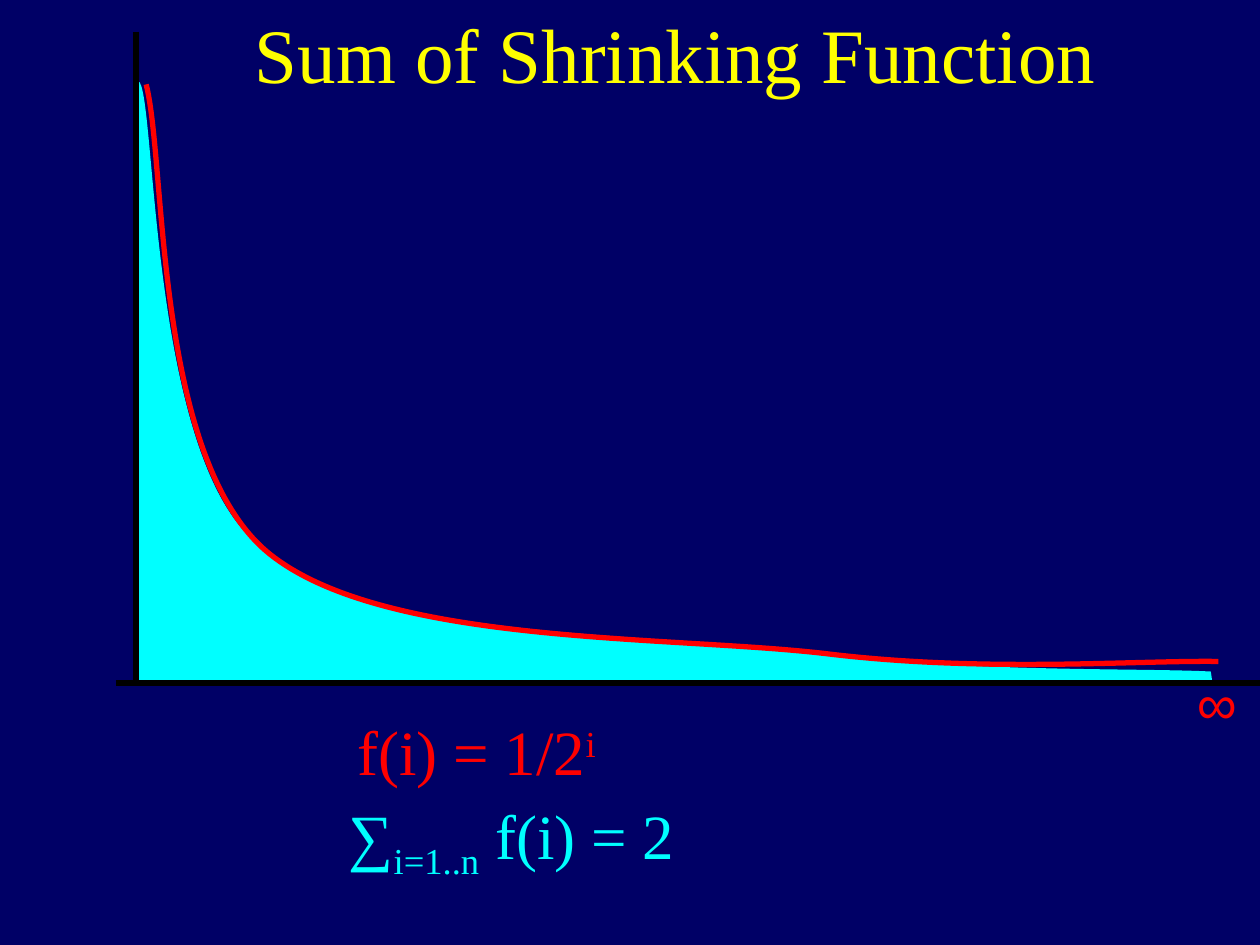
import pptx
import pptx.dml.color
import pptx.enum.shapes
import pptx.enum.text
import pptx.oxml.ns
import pptx.util
from lxml import etree

Inches, Pt, qn = pptx.util.Inches, pptx.util.Pt, pptx.oxml.ns.qn
ALIGN = pptx.enum.text.PP_ALIGN

NAVY, CYAN, RED, BLACK, YELLOW = "000066", "00FFFF", "FF0000", "000000", "FFFF00"
SERIF = "Times New Roman"
LINE_WIDTH = 3

# Each outline is a start point, then cubic segments (3 points) or lines (1 point)
AREA = [
    [(2.06, 4.33)],
    [(2.93, 5.09), (5.07, 5.01), (6.33, 5.17)],
    [(7.59, 5.34), (9.06, 5.3), (9.61, 5.33)],
    [(9.62, 5.4)],
    [(1.08, 5.4)],
    [(1.08, 0.65)],
    [(1.25, 0.47), (1.14, 3.63), (2.06, 4.33)],
]
CURVE = [
    [(1.16, 0.67)],
    [(1.32, 1.29), (1.22, 3.62), (2.12, 4.38)],
    [(3.02, 5.13), (5.31, 5.04), (6.57, 5.19)],
    [(7.82, 5.34), (9.02, 5.24), (9.67, 5.25)],
]
AXES = [((1.08, 0.25), (1.08, 5.42)), ((0.92, 5.42), (10, 5.42))]

# Box, alignment, font format, colour, runs of (text, baseline shift in percent)
TEXTS = [
    ((2.74, 5.61, 2.1, 0.7), ALIGN.LEFT, {"size": Pt(36), "name": SERIF}, RED,
     [("f(i) = 1/2", 0), ("i", 30)]),
    ((2.67, 6.27, 2.88, 0.7), ALIGN.LEFT, {"size": Pt(36), "name": SERIF}, CYAN,
     [("∑", 0), ("i=1..n", -25), (" f(i) = 2", 0)]),
    ((9.4, 5.26, 0.52, 0.63), ALIGN.LEFT, {"size": Pt(32), "name": "Arial"}, RED,
     [("∞", 0)]),
    ((1.92, 0, 6.88, 0.83), ALIGN.RIGHT, {"size": Pt(44), "name": SERIF}, YELLOW,
     [("Sum of Shrinking Function", 0)]),
]


def rgb(color):
    return pptx.dml.color.RGBColor.from_string(color)


def set_line(line, color):
    line.color.rgb = rgb(color)
    line.width = Pt(LINE_WIDTH)


def add_outline(slide, outline, close):
    """Draw straight segments through all points, then turn each triple into a curve."""
    start, *points = [(Inches(x), Inches(y)) for segment in outline for x, y in segment]
    builder = slide.shapes.build_freeform(*start)
    builder.add_line_segments(points, close=close)
    sp = builder.convert_to_shape()
    sp.shadow.inherit = False

    steps = iter(list(sp._element.iter(qn("a:lnTo"))))
    for segment in outline[1:]:
        lines = [next(steps) for _ in segment]
        if len(lines) == 3:
            curve = etree.Element(qn("a:cubicBezTo"))
            lines[0].addprevious(curve)
            for line in lines:
                curve.append(line[0])
                line.getparent().remove(line)
    return sp


def add_axis(slide, start, end):
    cx = slide.shapes.add_connector(pptx.enum.shapes.MSO_CONNECTOR.STRAIGHT,
                                    *map(Inches, start + end))
    set_line(cx.line, BLACK)
    etree.SubElement(cx._element.spPr, qn("a:effectLst"))


def add_text(slide, box, align, font, color, runs):
    tf = slide.shapes.add_textbox(*map(Inches, box)).text_frame
    tf.word_wrap = False
    tf.auto_size = pptx.enum.text.MSO_AUTO_SIZE.SHAPE_TO_FIT_TEXT
    p = tf.paragraphs[0]
    p.alignment = align
    for text, shift in runs:
        r = p.add_run()
        r.text = text
        for name, value in font.items():
            setattr(r.font, name, value)
        r.font.color.rgb = rgb(color)
        if shift:
            r._r.get_or_add_rPr().set("baseline", str(shift * 1000))


def main():
    prs = pptx.Presentation()
    prs.slide_width, prs.slide_height = Inches(10), Inches(7.5)
    s = prs.slides.add_slide(prs.slide_layouts[6])
    s.background.fill.solid()
    s.background.fill.fore_color.rgb = rgb(NAVY)

    area = add_outline(s, AREA, close=True)
    area.fill.solid()
    area.fill.fore_color.rgb = rgb(CYAN)
    area.line.fill.background()

    curve = add_outline(s, CURVE, close=False)
    curve.fill.background()
    set_line(curve.line, RED)

    for start, end in AXES:
        add_axis(s, start, end)
    for text in TEXTS:
        add_text(s, *text)
    prs.save("out.pptx")


if __name__ == "__main__":
    main()
